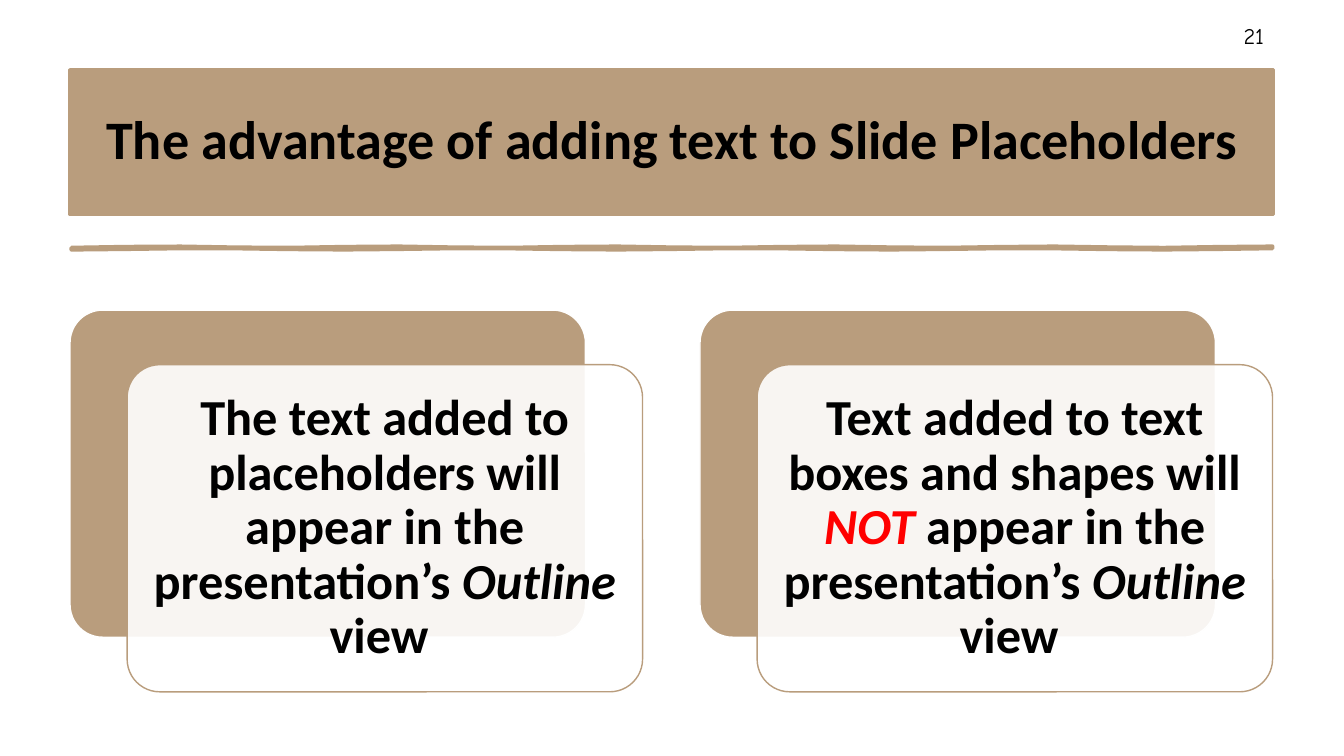
"""Build the slide on the advantage of adding text to slide placeholders."""
from dataclasses import dataclass
from math import sin

from lxml.etree import SubElement
from pptx import Presentation
from pptx.dml.color import RGBColor
from pptx.enum.shapes import MSO_SHAPE
from pptx.enum.text import MSO_ANCHOR, MSO_AUTO_SIZE, PP_ALIGN
from pptx.oxml.ns import qn
from pptx.shapes.autoshape import Shape
from pptx.slide import Slide
from pptx.util import Pt

TAN, WHITE, BLACK, RED = "B99D7D", "FFFFFF", "000000", "FF0000"
SLIDE_W, SLIDE_H = 960, 540
CARD_W, CARD_H, CARD_TOP = 368.2, 233.7, 221.5
FRONT_DX, FRONT_DY = 40.8, 39


@dataclass
class Span:
    """A stretch of card text with its own look."""
    text: str
    italic: bool = False
    color: str = BLACK


@dataclass
class Card:
    """A pair of overlapping panels with a message on the front one."""
    left: float
    spans: list[Span]


CARDS = [
    Card(50, [
        Span("The text added to placeholders will appear in the presentation’s "),
        Span("Outline", italic=True),
        Span(" view "),
    ]),
    Card(500, [
        Span("Text added to text boxes and shapes will "),
        Span("NOT", italic=True, color=RED),
        Span(" appear in the presentation’s "),
        Span("Outline", italic=True),
        Span(" view "),
    ]),
]


def rgb(color: str) -> RGBColor:
    """Turn a hex string into a colour."""
    return RGBColor.from_string(color)


def paint(sp: Shape, fill: str, line: str, width: float) -> None:
    """Give a shape a solid fill and an outline."""
    sp.fill.solid()
    sp.fill.fore_color.rgb = rgb(fill)
    sp.line.color.rgb = rgb(line)
    sp.line.width = Pt(width)


def style_run(r, font: str, size: float, color: str = BLACK,
              bold: bool = False, italic: bool = False) -> None:
    """Format one run."""
    r.font.name = font
    r.font.size = Pt(size)
    r.font.color.rgb = rgb(color)
    r.font.bold = bold
    r.font.italic = italic


def add_backdrop(s: Slide) -> None:
    """Lay a white sheet behind everything on the slide."""
    sp = s.shapes.add_shape(MSO_SHAPE.RECTANGLE, 0, 0, Pt(SLIDE_W), Pt(SLIDE_H))
    sp.shadow.inherit = False
    sp.fill.solid()
    sp.fill.fore_color.rgb = rgb(WHITE)
    sp.line.fill.background()
    s.shapes.title.element.addprevious(sp.element)


def add_title(s: Slide, text: str) -> None:
    """Fill and place the title banner."""
    sp = s.shapes.title
    sp.left, sp.top, sp.width, sp.height = Pt(50), Pt(49.7), Pt(859.5), Pt(103.7)
    paint(sp, TAN, TAN, 2.25)
    tf = sp.text_frame
    tf.text = text
    tf.word_wrap = True
    tf.auto_size = MSO_AUTO_SIZE.NONE
    tf.vertical_anchor = MSO_ANCHOR.MIDDLE
    p = tf.paragraphs[0]
    p.alignment = PP_ALIGN.CENTER
    p.line_spacing = 0.9
    style_run(p.runs[0], "Calibri", 38.7, bold=True)


def add_page_number(s: Slide, text: str) -> None:
    """Write the page number at the top right."""
    tf = s.shapes.add_textbox(Pt(766), Pt(11), Pt(144), Pt(29)).text_frame
    tf.text = text
    tf.word_wrap = True
    tf.vertical_anchor = MSO_ANCHOR.MIDDLE
    p = tf.paragraphs[0]
    p.alignment = PP_ALIGN.RIGHT
    style_run(p.runs[0], "Comic Neue", 16)


def add_wavy_rule(s: Slide) -> None:
    """Draw the hand-drawn rule below the title."""
    xs = range(51, 910, 39)
    upper = [(Pt(x), Pt(176.5 + 0.5 * sin(x / 25))) for x in xs]
    lower = [(Pt(x), Pt(177.9 + 0.5 * sin(x / 31))) for x in reversed(xs)]
    outline = upper + lower
    builder = s.shapes.build_freeform(*outline[0])
    builder.add_line_segments(outline[1:], close=True)
    sp = builder.convert_to_shape()
    sp.shadow.inherit = False
    paint(sp, TAN, TAN, 2.75)


def add_panel(s: Slide, left: float, top: float, fill: str, line: str) -> Shape:
    """Draw one rounded panel of a card."""
    sp = s.shapes.add_shape(MSO_SHAPE.ROUNDED_RECTANGLE,
                            Pt(left), Pt(top), Pt(CARD_W), Pt(CARD_H))
    sp.adjustments[0] = 0.1
    sp.shadow.inherit = False
    paint(sp, fill, line, 1)
    return sp


def add_card(s: Slide, card: Card) -> None:
    """Draw the back panel and the translucent front panel with its text."""
    add_panel(s, card.left, CARD_TOP, TAN, WHITE)
    sp = add_panel(s, card.left + FRONT_DX, CARD_TOP + FRONT_DY, WHITE, TAN)
    white = sp.element.spPr.find(qn("a:solidFill"))[0]
    SubElement(white, qn("a:alpha")).set("val", "90000")
    tf = sp.text_frame
    tf.word_wrap = True
    tf.vertical_anchor = MSO_ANCHOR.MIDDLE
    tf.margin_left = tf.margin_right = tf.margin_top = tf.margin_bottom = Pt(10.8)
    p = tf.paragraphs[0]
    p.alignment = PP_ALIGN.CENTER
    p.line_spacing = 0.9
    for span in card.spans:
        r = p.add_run()
        r.text = span.text
        style_run(r, "Calibri", 36, span.color, bold=True, italic=span.italic)


def main() -> None:
    """Build and save the presentation."""
    prs = Presentation()
    prs.slide_width, prs.slide_height = Pt(SLIDE_W), Pt(SLIDE_H)
    s = prs.slides.add_slide(prs.slide_layouts[5])
    add_backdrop(s)
    add_title(s, "The advantage of adding text to Slide Placeholders")
    add_page_number(s, "21")
    add_wavy_rule(s)
    for card in CARDS:
        add_card(s, card)
    prs.save("out.pptx")


if __name__ == "__main__":
    main()
